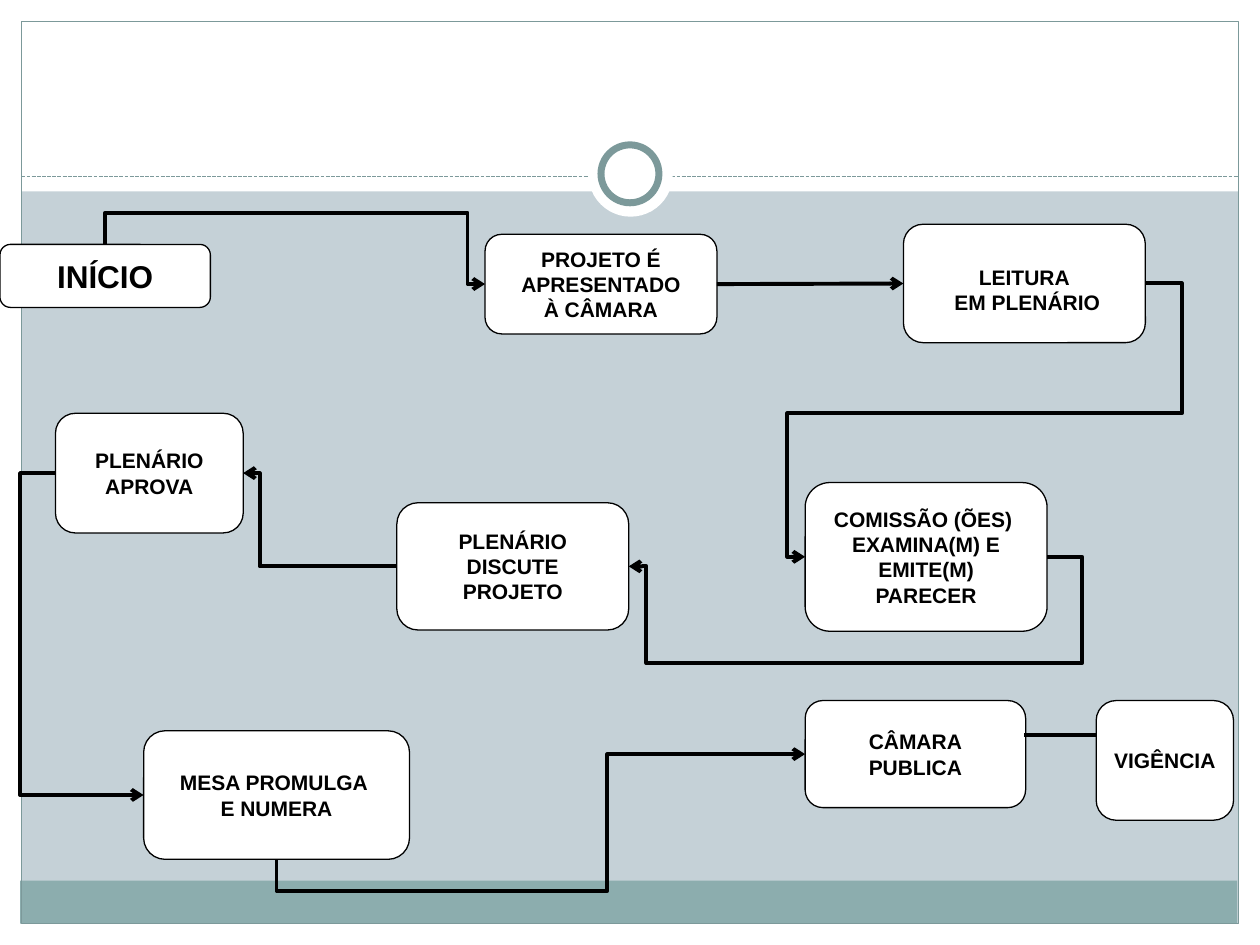
from pptx import Presentation
from pptx.dml.color import RGBColor
from pptx.enum.dml import MSO_LINE
from pptx.enum.shapes import MSO_CONNECTOR, MSO_SHAPE
from pptx.enum.text import MSO_ANCHOR, PP_ALIGN
from pptx.oxml.ns import qn
from pptx.oxml.xmlchemy import OxmlElement
from pptx.util import Inches, Pt

RECT, OVAL, ROUND = MSO_SHAPE.RECTANGLE, MSO_SHAPE.OVAL, MSO_SHAPE.ROUNDED_RECTANGLE
STRAIGHT, ELBOW = MSO_CONNECTOR.STRAIGHT, MSO_CONNECTOR.ELBOW
DASH, CENTER, MIDDLE = MSO_LINE.SQUARE_DOT, PP_ALIGN.CENTER, MSO_ANCHOR.MIDDLE
TOP, LEFT, BOTTOM, RIGHT = range(4)
COLS, ROWS = 100, 75
WHITE, BLACK, EDGE, BAND, BACK = "FFFFFF", "000000", "7C999A", "8CADAE", "C5D1D7"


def tint(code):
    return RGBColor.from_string(code)


def write(frame, text, size=12, font="Arial", color=BLACK, bold=True, inset=0.05):
    frame.word_wrap = False
    frame.vertical_anchor = MIDDLE
    frame.margin_top = Inches(inset)
    for i, words in enumerate(text.split("\n")):
        para = frame.paragraphs[0] if i == 0 else frame.add_paragraph()
        para.alignment = CENTER
        run = para.add_run()
        run.text = words
        run.font.size, run.font.name, run.font.bold = Pt(size), font, bold
        run.font.color.rgb = tint(color)


class Chart:
    def __init__(self, deck):
        self.unit = deck.slide_width / COLS
        self.slide = deck.slides.add_slide(deck.slide_layouts[6])
        fill = self.slide.background.fill
        fill.solid()
        fill.fore_color.rgb = tint(BACK)

    def size(self, *cells):
        return [round(cell * self.unit) for cell in cells]

    def shape(self, kind, cells, fill=None, line=None, width=0.75):
        item = self.slide.shapes.add_shape(kind, *self.size(*cells))
        item.shadow.inherit = False
        if fill:
            item.fill.solid()
            item.fill.fore_color.rgb = tint(fill)
        else:
            item.fill.background()
        if line:
            item.line.color.rgb = tint(line)
            item.line.width = Pt(width)
        else:
            item.line.fill.background()
        return item

    def box(self, text, *cells, **form):
        item = self.shape(ROUND, cells, WHITE, BLACK)
        write(item.text_frame, text, **form)
        return item

    def line(self, *ends, kind=STRAIGHT, color=BLACK, width=2.25):
        item = self.slide.shapes.add_connector(kind, *self.size(*ends))
        item.line.color.rgb = tint(color)
        item.line.width = Pt(width)
        item._element.spPr.append(OxmlElement("a:effectLst"))
        return item

    def point(self, item):
        head = OxmlElement("a:headEnd")
        head.set("type", "arrow")
        item.line._get_or_add_ln().append(head)

    def link(self, goal, side, start, exit, *turns):
        item = self.line(0, 0, 0, 0, kind=ELBOW if turns else STRAIGHT)
        item.begin_connect(goal, side)
        item.end_connect(start, exit)
        self.point(item)
        if turns:
            self.bend(item, turns)

    def bend(self, item, turns):
        geom = item._element.spPr.find(qn("a:prstGeom"))
        geom.set("prst", f"bentConnector{len(turns) + 2}")
        marks = geom.find(qn("a:avLst"))
        if marks is None:
            marks = OxmlElement("a:avLst")
            geom.append(marks)
        spans = (item.begin_x, item.end_x), (item.begin_y, item.end_y)
        for i, turn in enumerate(turns):
            low, high = spans[i % 2]
            ratio = (turn * self.unit - low) / (high - low)
            mark = OxmlElement("a:gd")
            mark.set("name", f"adj{i + 1}")
            mark.set("fmla", f"val {round(ratio * 100000)}")
            marks.append(mark)


def main():
    deck = Presentation()
    deck.slide_width, deck.slide_height = Inches(10), Inches(7.5)
    chart = Chart(deck)

    for cells in ((0, 73.3, COLS, 1.7), (0, 0, COLS, 15.2),
                  (0, 0, 1.7, ROWS), (98.3, 0, 1.7, ROWS)):
        chart.shape(RECT, cells, WHITE)
    chart.shape(RECT, (1.6, 69.9, 96.6, 3.4), BAND)
    chart.shape(RECT, (1.7, 1.7, 96.6, 71.6), line=EDGE)
    chart.line(1.7, 14, 98.3, 14, color=EDGE, width=0.75).line.dash_style = DASH
    chart.shape(OVAL, (46.7, 10.5, 6.7, 6.7), WHITE)
    chart.shape(OVAL, (47.7, 11.5, 4.6, 4.6), WHITE, EDGE, 4)

    start = chart.box("INÍCIO", 0, 19.4, 16.7, 5, size=18)
    bill = chart.box("PROJETO É\nAPRESENTADO\nÀ CÂMARA", 38.5, 18.6, 18.4, 7.9)
    reading = chart.box("LEITURA\n EM PLENÁRIO", 71.7, 17.8, 19.2, 9.4, inset=0.15)
    panel = chart.box("COMISSÃO (ÕES) \nEXAMINA(M) E\nEMITE(M)\nPARECER",
                      63.9, 38.3, 19.2, 11.8)
    debate = chart.box("PLENÁRIO\nDISCUTE\nPROJETO", 31.5, 39.9, 18.4, 10.1)
    vote = chart.box("PLENÁRIO\nAPROVA", 4.4, 32.8, 14.9, 9.5)
    desk = chart.box("MESA PROMULGA \nE NUMERA", 11.4, 58, 21.1, 10.2)
    issue = chart.box("CÂMARA\nPUBLICA", 63.9, 55.6, 17.5, 8.5)

    chart.link(bill, LEFT, start, TOP, 37.1, 16.9)
    chart.link(reading, LEFT, bill, RIGHT)
    chart.link(panel, LEFT, reading, RIGHT, 62.5, 32.8, 93.8)
    chart.link(debate, RIGHT, panel, RIGHT, 51.3, 52.6, 85.9)
    chart.link(vote, RIGHT, debate, LEFT, 20.6)
    chart.link(desk, LEFT, vote, LEFT, 1.6)
    chart.link(issue, LEFT, desk, BOTTOM, 48.2, 70.7)

    chart.point(chart.line(94.7, 58.3, 81.3, 58.3))
    chart.box("VIGÊNCIA", 87, 55.6, 10.9, 9.5)
    deck.save("out.pptx")


if __name__ == "__main__":
    main()
